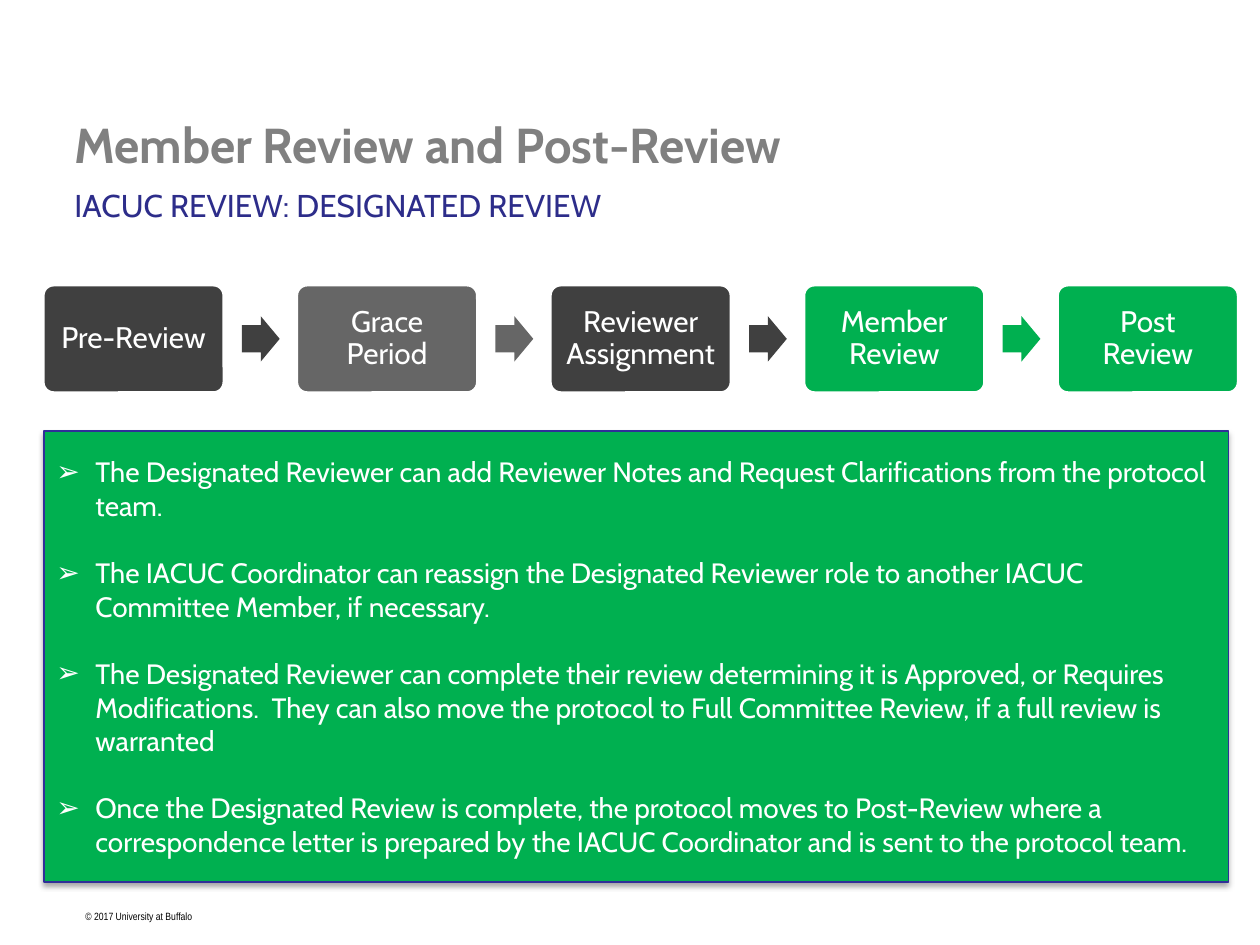
from lxml.etree import SubElement
from pptx import Presentation
from pptx.dml.color import RGBColor
from pptx.enum.shapes import MSO_SHAPE
from pptx.enum.text import MSO_ANCHOR, PP_ALIGN
from pptx.oxml.ns import qn
from pptx.util import Inches, Pt

COLORS = {
    "title": "808080",
    "subtitle": "2D2D8A",
    "border": "2F2F98",
    "dark": "404040",
    "grey": "666666",
    "green": "00B050",
    "white": "FFFFFF",
    "black": "000000",
}
STEPS = [
    ("Pre-Review", "dark"),
    ("Grace Period", "grey"),
    ("Reviewer Assignment", "dark"),
    ("Member Review", "green"),
    ("Post Review", "green"),
]
NOTES = [
    "The Designated Reviewer can add Reviewer Notes and Request Clarifications "
    "from the protocol team.",
    "The IACUC Coordinator can reassign the Designated Reviewer role to another "
    "IACUC Committee Member, if necessary.",
    "The Designated Reviewer can complete their review determining it is Approved, "
    "or Requires Modifications.  They can also move the protocol to Full Committee "
    "Review, if a full review is warranted",
    "Once the Designated Review is complete, the protocol moves to Post-Review where "
    "a correspondence letter is prepared by the IACUC Coordinator and is sent to the "
    "protocol team.",
]


def color(name):
    return RGBColor.from_string(COLORS[name])


def set_attributes(target, values):
    for name, value in values.items():
        setattr(target, name, value)


def place(shape, box):
    names = ("left", "top", "width", "height")
    set_attributes(shape, dict(zip(names, map(Inches, box))))


def format_paragraph(paragraph, size, color_name, font="Cabin", bold=False, **values):
    set_attributes(paragraph, values)
    set_attributes(paragraph.font, {"name": font, "size": Pt(size), "bold": bold})
    paragraph.font.color.rgb = color(color_name)


def add_block(slide, kind, box, fill, line=None, line_width=1):
    shape = slide.shapes.add_shape(kind, *map(Inches, box))
    shape.shadow.inherit = False
    shape.fill.solid()
    shape.fill.fore_color.rgb = color(fill)
    if line:
        shape.line.color.rgb = color(line)
        shape.line.width = Pt(line_width)
    else:
        shape.line.fill.background()
    return shape


def add_heading(placeholder, box, text, size, color_name, bold=False):
    place(placeholder, box)
    frame = placeholder.text_frame
    frame.text = text
    set_attributes(frame, {"vertical_anchor": MSO_ANCHOR.TOP, "word_wrap": True})
    format_paragraph(frame.paragraphs[0], size, color_name, bold=bold,
                     alignment=PP_ALIGN.LEFT, space_before=Pt(0))


def add_process(slide, box):
    """Equal step boxes across the region, with an arrow in each gap."""
    left, top, width, height = box
    step_width, arrow_width, arrow_height = 1.44, 0.3, 0.36
    pitch = (width - step_width) / (len(STEPS) - 1)
    for index, (label, fill) in enumerate(STEPS):
        step_left = left + index * pitch
        step = add_block(slide, MSO_SHAPE.ROUNDED_RECTANGLE,
                         (step_left, top, step_width, height), fill, "white", 2)
        step.adjustments[0] = 0.1
        frame = step.text_frame
        frame.text = label
        margins = ("margin_left", "margin_right", "margin_top", "margin_bottom")
        set_attributes(frame, dict.fromkeys(margins, Inches(0.09)))
        set_attributes(frame, {"word_wrap": True, "vertical_anchor": MSO_ANCHOR.MIDDLE})
        format_paragraph(frame.paragraphs[0], 17, "white",
                         alignment=PP_ALIGN.CENTER, line_spacing=0.9)
        if index < len(STEPS) - 1:
            arrow_box = (step_left + step_width + 0.14, top + (height - arrow_height) / 2,
                         arrow_width, arrow_height)
            arrow = add_block(slide, MSO_SHAPE.RIGHT_ARROW, arrow_box, fill)
            arrow.adjustments[0] = 0.6
            arrow.adjustments[1] = 0.5


def add_soft_shadow(shape):
    effects = shape._element.spPr.find(qn("a:effectLst"))
    shadow = SubElement(effects, qn("a:outerShdw"), blurRad=str(Pt(3.1)),
                        dist=str(Pt(1.8)), dir="5400000", rotWithShape="0")
    tint = SubElement(shadow, qn("a:srgbClr"), val=COLORS["black"])
    SubElement(tint, qn("a:alpha"), val="35000")


def add_bullet(paragraph, character, indent):
    properties = paragraph._p.get_or_add_pPr()
    properties.set("marL", str(Inches(indent)))
    properties.set("indent", str(-Inches(indent)))
    SubElement(properties, qn("a:buFont"), typeface="Arial")
    SubElement(properties, qn("a:buChar"), char=character)


def add_notes_panel(slide, box):
    panel = add_block(slide, MSO_SHAPE.RECTANGLE, box, "green", "border", 0.75)
    add_soft_shadow(panel)
    frame = panel.text_frame
    frame.text = "\n".join(NOTES)
    set_attributes(frame, {"word_wrap": True, "vertical_anchor": MSO_ANCHOR.MIDDLE})
    for index, paragraph in enumerate(frame.paragraphs):
        add_bullet(paragraph, "➢", 0.31)
        format_paragraph(paragraph, 16, "white", alignment=PP_ALIGN.LEFT,
                         space_before=Pt(19.2 if index else 0))


def add_copyright(slide, box):
    frame = slide.shapes.add_textbox(*map(Inches, box)).text_frame
    frame.text = "© 2017 University at Buffalo"
    frame.word_wrap = False
    format_paragraph(frame.paragraphs[0], 6, "black", font="Arial Narrow")


def main():
    presentation = Presentation()
    set_attributes(presentation, {"slide_width": Inches(10), "slide_height": Inches(7.5)})
    slide = presentation.slides.add_slide(presentation.slide_layouts[0])

    # Headings
    add_heading(slide.shapes.title, (0.49, 0.86, 7.05, 0.56),
                "Member Review and Post-Review", 28, "title", bold=True)
    add_heading(slide.placeholders[1], (0.49, 1.43, 7.05, 0.5),
                "IACUC REVIEW: DESIGNATED REVIEW", 18, "subtitle")

    # Process steps, notes and footer
    add_process(slide, (0.34, 2.26, 9.49, 0.86))
    add_notes_panel(slide, (0.35, 3.42, 9.4, 3.58))
    add_copyright(slide, (0.58, 7.17, 1.06, 0.2))

    presentation.save("out.pptx")


if __name__ == "__main__":
    main()
